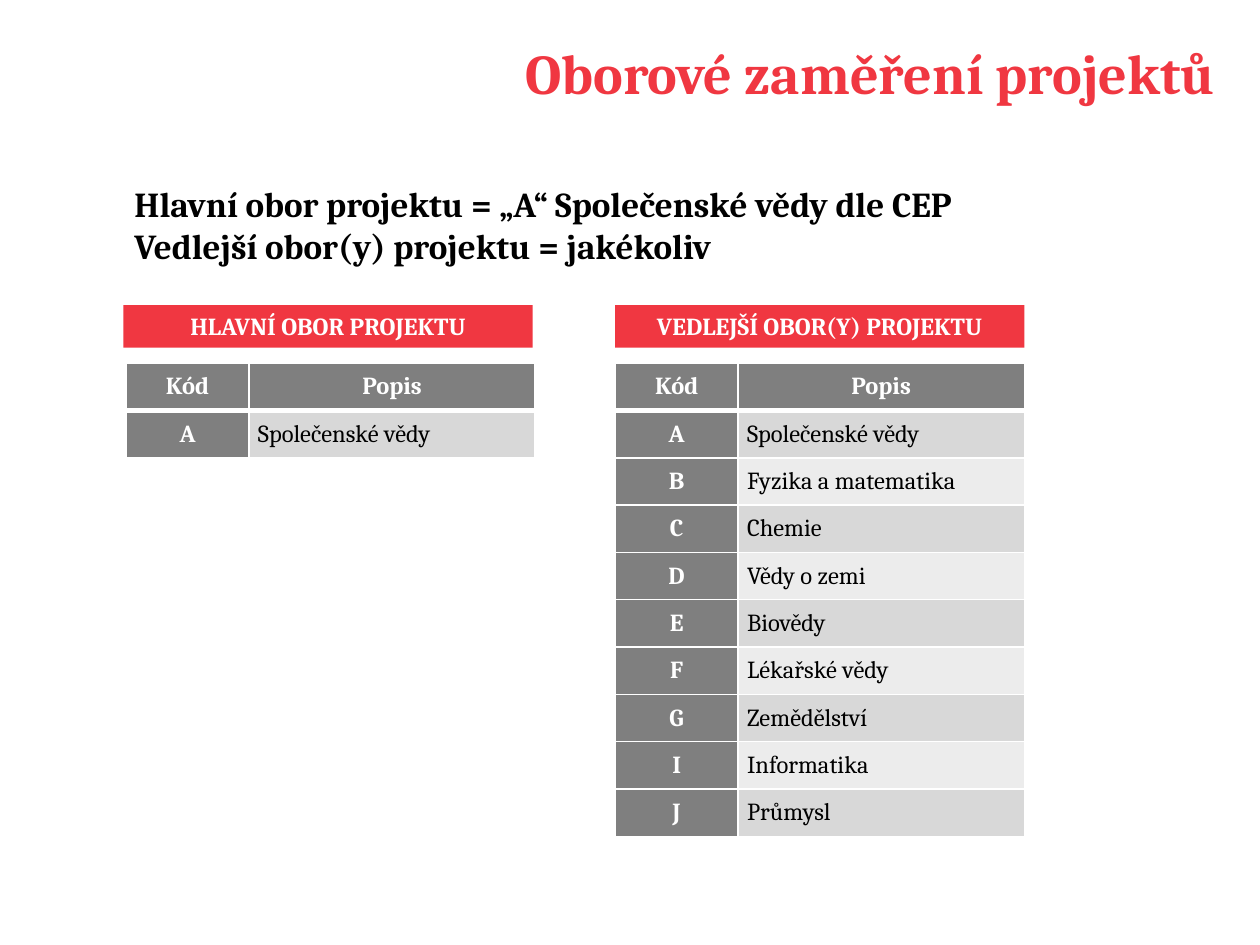
from lxml import etree
from pptx import Presentation
from pptx.dml.color import RGBColor
from pptx.enum import shapes, text
from pptx.oxml import ns
from pptx.util import Cm, Pt

RED = RGBColor(0xF0, 0x37, 0x41)
WHITE = RGBColor(0xFF, 0xFF, 0xFF)
BLACK = RGBColor(0, 0, 0)
GREY = RGBColor(0x7F, 0x7F, 0x7F)
BANDS = [RGBColor(0xD8, 0xD8, 0xD8), RGBColor(0xEC, 0xEC, 0xEC)]

FONT = "Cambria"
LEFT, CENTER, RIGHT = text.PP_ALIGN.LEFT, text.PP_ALIGN.CENTER, text.PP_ALIGN.RIGHT
COLUMN_WIDTHS = [Cm(2.48), Cm(5.77)]
PANEL_WIDTH = sum(COLUMN_WIDTHS)
BANNER_HEIGHT = Cm(0.86)
TABLE_OFFSET = Cm(1.17)
ROW_HEIGHT = Cm(0.94)
CELL_MARGIN = Cm(0.18)

MAIN_FIELDS = [("A", "Společenské vědy")]
SECONDARY_FIELDS = MAIN_FIELDS + [
    ("B", "Fyzika a matematika"),
    ("C", "Chemie"),
    ("D", "Vědy o zemi"),
    ("E", "Biovědy"),
    ("F", "Lékařské vědy"),
    ("G", "Zemědělství"),
    ("I", "Informatika"),
    ("J", "Průmysl"),
]


def write(frame, *lines, size=14, color=WHITE, bold=True, align=CENTER):
    """Write one paragraph per line, all in the same format."""
    for index, line in enumerate(lines):
        paragraph = frame.add_paragraph() if index else frame.paragraphs[0]
        paragraph.alignment = align
        run = paragraph.add_run()
        run.text = line
        run.font.name = FONT
        run.font.size = Pt(size)
        run.font.bold = bold
        run.font.color.rgb = color


def add_borders(cell, bottom):
    properties = cell._tc.get_or_add_tcPr()
    for side, width in (("L", 1), ("R", 1), ("T", 1), ("B", bottom)):
        line = etree.SubElement(properties, ns.qn(f"a:ln{side}"), w=str(Pt(width)))
        fill = etree.SubElement(line, ns.qn("a:solidFill"))
        etree.SubElement(fill, ns.qn("a:srgbClr"), val=str(WHITE))


def format_cell(cell, content, fill, bottom=1, **text_format):
    cell.margin_left = cell.margin_right = CELL_MARGIN
    cell.margin_top = cell.margin_bottom = CELL_MARGIN
    cell.vertical_anchor = text.MSO_ANCHOR.MIDDLE
    add_borders(cell, bottom)
    cell.fill.solid()
    cell.fill.fore_color.rgb = fill
    write(cell.text_frame, content, **text_format)


def set_title(slide, left, top, width, height):
    title = slide.shapes.title
    title.left, title.top, title.width, title.height = left, top, width, height
    title.text_frame.vertical_anchor = text.MSO_ANCHOR.MIDDLE
    write(title.text_frame, "Oborové zaměření projektů ",
          size=32, color=RED, align=RIGHT)


def add_summary(slide, left, top, width, height):
    frame = slide.shapes.add_textbox(left, top, width, height).text_frame
    frame.word_wrap = True
    write(frame, "Hlavní obor projektu = „A“ Společenské vědy dle CEP",
          "Vedlejší obor(y) projektu = jakékoliv",
          size=20, color=BLACK, align=LEFT)


def add_panel(slide, left, top, heading, fields, table_indent=0):
    """Place a red heading with a table of fields below it."""
    # Heading
    banner = slide.shapes.add_shape(
        shapes.MSO_SHAPE.RECTANGLE, left, top, PANEL_WIDTH, BANNER_HEIGHT)
    banner.shadow.inherit = False
    banner.fill.solid()
    banner.fill.fore_color.rgb = RED
    banner.line.fill.background()
    banner.text_frame.word_wrap = True
    banner.text_frame.vertical_anchor = text.MSO_ANCHOR.TOP
    write(banner.text_frame, heading)

    # Table
    row_count = len(fields) + 1
    table = slide.shapes.add_table(
        row_count, 2, left + table_indent, top + TABLE_OFFSET,
        PANEL_WIDTH, ROW_HEIGHT * row_count).table
    for column, width in zip(table.columns, COLUMN_WIDTHS):
        column.width = width
    for row in table.rows:
        row.height = ROW_HEIGHT
    for column, label in enumerate(("Kód", "Popis")):
        format_cell(table.cell(0, column), label, GREY, bottom=3)
    for row, (code, description) in enumerate(fields, start=1):
        format_cell(table.cell(row, 0), code, GREY)
        format_cell(table.cell(row, 1), description, BANDS[(row - 1) % 2],
                    color=BLACK, bold=False, align=LEFT)


def main():
    presentation = Presentation()
    presentation.slide_width, presentation.slide_height = Cm(25.4), Cm(19.05)
    slide = presentation.slides.add_slide(presentation.slide_layouts[5])

    set_title(slide, Cm(0.3), Cm(0), Cm(24.71), Cm(2.92))
    add_summary(slide, Cm(2.46), Cm(3.56), Cm(19.3), Cm(1.96))
    add_panel(slide, Cm(2.49), Cm(6.15), "HLAVNÍ OBOR PROJEKTU",
              MAIN_FIELDS, table_indent=Cm(0.05))
    add_panel(slide, Cm(12.4), Cm(6.15), "VEDLEJŠÍ OBOR(Y) PROJEKTU",
              SECONDARY_FIELDS)

    presentation.save("out.pptx")


if __name__ == "__main__":
    main()
